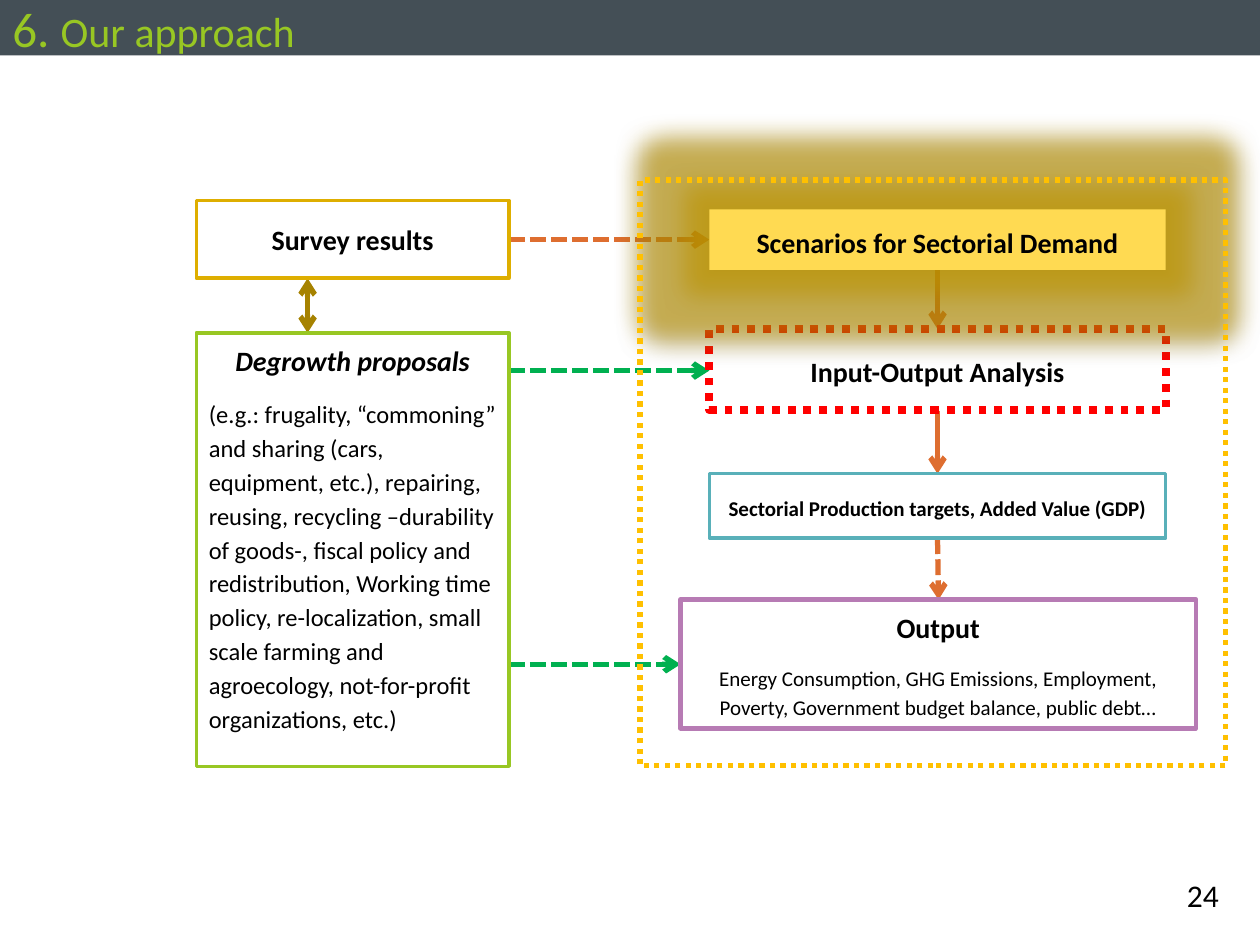
from pptx import Presentation
from pptx.dml.color import RGBColor
from pptx.enum.dml import MSO_LINE
from pptx.enum.shapes import MSO_CONNECTOR, MSO_SHAPE
from pptx.enum.text import MSO_ANCHOR, PP_ALIGN
from pptx.oxml import parse_xml
from pptx.oxml.ns import nsdecls, qn
from pptx.util import Cm, Pt

BLACK = RGBColor(0x00, 0x00, 0x00)
WHITE = RGBColor(0xFF, 0xFF, 0xFF)
SLATE = RGBColor(0x44, 0x4F, 0x56)
LIME = RGBColor(0x98, 0xC7, 0x23)
GREEN = RGBColor(0x00, 0xB0, 0x50)
BROWN = RGBColor(0xA6, 0x82, 0x00)
RUST = RGBColor(0xDE, 0x6E, 0x30)
GOLD = RGBColor(0xDE, 0xAE, 0x00)
TEAL = RGBColor(0x59, 0xB0, 0xB9)
RED = RGBColor(0xFF, 0x00, 0x00)
MAUVE = RGBColor(0xB7, 0x7B, 0xB4)
SUN = RGBColor(0xFF, 0xDA, 0x52)
AMBER = RGBColor(0xFF, 0xC0, 0x00)
DASH = MSO_LINE.SQUARE_DOT
DOT = MSO_LINE.ROUND_DOT

deck = Presentation()
deck.slide_width, deck.slide_height = Cm(25.4), Cm(19.05)
slide = deck.slides.add_slide(deck.slide_layouts[6])


def add_box(place, fill, edge=None, width=2, dash=None):
    box = slide.shapes.add_shape(MSO_SHAPE.RECTANGLE, *map(Cm, place))
    box.shadow.inherit = False
    if fill is None:
        box.fill.background()
    else:
        box.fill.solid()
        box.fill.fore_color.rgb = fill
    if edge is None:
        box.line.fill.background()
    else:
        box.line.color.rgb = edge
        box.line.width = Pt(width)
        if dash is not None:
            box.line.dash_style = dash
    return box


def write(box, lines, anchor=MSO_ANCHOR.MIDDLE, space=True):
    frame = box.text_frame
    frame.word_wrap = True
    frame.vertical_anchor = anchor
    for i, (text, size, bold, slant, align) in enumerate(lines):
        para = frame.add_paragraph() if i else frame.paragraphs[0]
        para.text = text
        para.alignment = align
        if space:
            para.line_spacing = 1.15
            para.space_after = Pt(10)
        font = para.font
        font.name, font.size, font.color.rgb = "Calibri", Pt(size), BLACK
        font.bold, font.italic = bold, slant


MID = PP_ALIGN.CENTER
LEFT = PP_ALIGN.LEFT

bar = add_box((0, 0, 25.4, 1.12), SLATE)
bar.text_frame.vertical_anchor = MSO_ANCHOR.MIDDLE
title = bar.text_frame.paragraphs[0]
title.alignment = LEFT
title.font.name, title.font.color.rgb = "Calibri", LIME
for text, size in (("6. ", 28), ("Our approach", 24)):
    run = title.add_run()
    run.text, run.font.size = text, Pt(size)

page = slide.shapes.add_textbox(Cm(23.19), Cm(17.53), Cm(1.63), Cm(1.02))
write(page, [("24", 18, False, False, PP_ALIGN.RIGHT)], MSO_ANCHOR.TOP, False)

arrows = [
    (10.26, 13.39, 13.72, 13.39, GREEN, DASH, False),
    (6.2, 6.71, 6.2, 5.61, BROWN, None, True),
    (18.9, 10.85, 18.92, 12.09, RUST, DASH, False),
    (10.26, 4.83, 14.3, 4.83, RUST, DASH, False),
    (18.9, 5.44, 18.9, 6.63, RUST, None, False),
    (18.9, 8.28, 18.9, 9.55, RUST, None, False),
    (10.26, 7.47, 14.3, 7.47, GREEN, DASH, False),
]
for *ends, tint, dash, both in arrows:
    arrow = slide.shapes.add_connector(MSO_CONNECTOR.STRAIGHT, *map(Cm, ends))
    arrow.line.color.rgb, arrow.line.width = tint, Pt(3)
    if dash is not None:
        arrow.line.dash_style = dash
    line = arrow.line._get_or_add_ln()
    for tag in ("headEnd", "tailEnd") if both else ("tailEnd",):
        line.append(parse_xml(f'<a:{tag} {nsdecls("a")} type="arrow"/>'))
    arrow._element.spPr.append(parse_xml(f'<a:effectLst {nsdecls("a")}/>'))

boxes = [
    ((3.96, 4.04, 6.3, 1.57), WHITE, GOLD, 2, None, "Survey results", 16),
    ((14.3, 9.55, 9.2, 1.3), WHITE, TEAL, 2, None,
     "Sectorial Production targets, Added Value (GDP)", 12),
    ((14.3, 6.63, 9.2, 1.63), None, RED, 4.5, DOT, "Input-Output Analysis", 16),
    ((14.3, 4.22, 9.2, 1.22), SUN, None, 0, None,
     "Scenarios for Sectorial Demand", 16),
]
for place, fill, edge, width, dash, text, size in boxes:
    box = add_box(place, fill, edge, width, dash)
    write(box, [(text, size, True, False, MID)], space=edge != GOLD)

glow = box._element.spPr.find(qn("a:effectLst"))
glow.append(parse_xml(
    f'<a:glow {nsdecls("a")} rad="355600"><a:srgbClr val="BF9600">'
    '<a:alpha val="60000"/></a:srgbClr></a:glow>'))
glow.append(parse_xml(
    f'<a:outerShdw {nsdecls("a")} blurRad="44450" dist="27940" dir="5400000">'
    '<a:srgbClr val="000000"><a:alpha val="32000"/></a:srgbClr></a:outerShdw>'))

result = add_box((13.72, 12.09, 10.39, 2.59), WHITE, MAUVE, 2.75)
write(result, [
    ("Output", 16, True, False, MID),
    ("Energy Consumption, GHG Emissions, Employment, Poverty, "
     "Government budget balance, public debt…", 12, False, False, MID),
], MSO_ANCHOR.TOP)

ideas = add_box((3.96, 6.71, 6.3, 8.74), WHITE, LIME)
write(ideas, [
    ("Degrowth proposals", 16, True, True, MID),
    ("(e.g.: frugality, “commoning” and sharing (cars, equipment, etc.), "
     "repairing, reusing, recycling –durability of goods-, fiscal policy and "
     "redistribution, Working time policy, re-localization, small scale farming "
     "and agroecology, not-for-profit organizations, etc.)",
     14, False, False, LEFT),
], MSO_ANCHOR.TOP)

add_box((12.9, 3.63, 11.81, 11.81), None, AMBER, 3, DOT)

deck.save("out.pptx")
